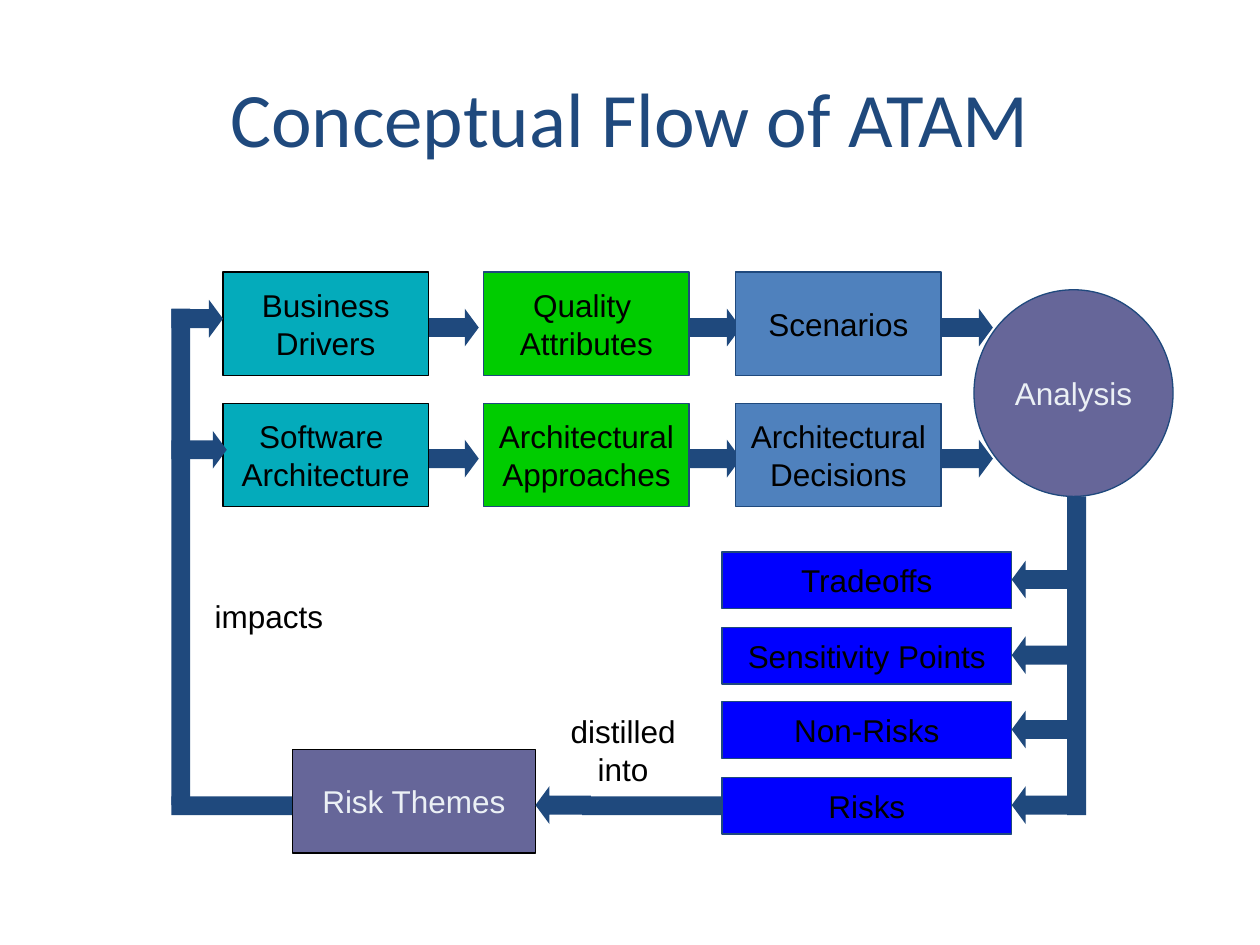
from pptx import Presentation
from pptx.dml.color import RGBColor
from pptx.enum.shapes import MSO_SHAPE as Kind
from pptx.enum.text import MSO_ANCHOR as Anchor, PP_ALIGN as Align
from pptx.util import Emu, Pt

SCALE = 9144  # EMU in one px, 100 px to the inch
NAVY = RGBColor(0x1F, 0x49, 0x7D)
BLUE = RGBColor(0x4F, 0x81, 0xBD)
PURE = RGBColor(0x00, 0x00, 0xFF)
GREEN = RGBColor(0x00, 0xCC, 0x00)
TEAL = RGBColor(0x04, 0xAB, 0xBB)
MAUVE = RGBColor(0x66, 0x66, 0x99)
PALE = RGBColor(0xEB, 0xF0, 0xF5)
BLACK = RGBColor(0x00, 0x00, 0x00)

FRAME = {"margin_left": Emu(9 * SCALE), "margin_right": Emu(9 * SCALE),
         "margin_top": Emu(4 * SCALE), "margin_bottom": Emu(4 * SCALE),
         "vertical_anchor": Anchor.MIDDLE, "word_wrap": False}
FONT = {"name": "Arial", "size": Pt(18)}
HEAD = {"name": "Calibri", "size": Pt(44)}


def px(*sizes):
    return [Emu(size * SCALE) for size in sizes]


def assign(item, values):
    for name, value in values.items():
        setattr(item, name, value)


class Chart:
    """Draws the flow chart's elements on one slide."""

    def __init__(self, slide):
        self.shapes = slide.shapes

    def fill_text(self, shape, text, color, font=FONT):
        frame = shape.text_frame
        frame.text = text
        assign(frame, FRAME)
        for para in frame.paragraphs:
            para.alignment = Align.CENTER
            assign(para.font, font)
            para.font.color.rgb = color

    def shape(self, kind, area, fill):
        shape = self.shapes.add_shape(kind, *px(*area))
        shape.shadow.inherit = False
        shape.fill.solid()
        shape.fill.fore_color.rgb = fill
        shape.line.fill.background()
        return shape

    def node(self, area, text, fill, line=NAVY, color=BLACK, kind=Kind.RECTANGLE):
        shape = self.shape(kind, area, fill)
        shape.line.color.rgb = line
        shape.line.width = Pt(0.75)
        self.fill_text(shape, text, color)

    def bar(self, *area):
        self.shape(Kind.RECTANGLE, area, NAVY)

    def arrow(self, left, top, kind=Kind.RIGHT_ARROW, width=44):
        shape = self.shape(kind, (left, top, width, 30), NAVY)
        shape.adjustments[0] = 0.5
        shape.adjustments[1] = 0.37

    def label(self, area, text, color=BLACK, font=FONT):
        self.fill_text(self.shapes.add_textbox(*px(*area)), text, color, font)


def main():
    deck = Presentation()
    deck.slide_width, deck.slide_height = px(1000, 750)
    chart = Chart(deck.slides.add_slide(deck.slide_layouts[6]))
    chart.label((50, 30, 900, 125), "Conceptual Flow of ATAM", NAVY, HEAD)

    rows = (216, 320)
    for left in (744, 544, 336):
        for top in rows:
            chart.arrow(left, top + 29)
    chart.node((773, 230, 158, 164), "Analysis", MAUVE, color=PALE, kind=Kind.OVAL)

    columns = (
        (177, TEAL, BLACK, ("Business\nDrivers", "Software \nArchitecture")),
        (384, GREEN, NAVY, ("Quality \nAttributes", "Architectural\nApproaches")),
        (584, BLUE, NAVY, ("Scenarios", "Architectural\nDecisions")),
    )
    for left, fill, line, texts in columns:
        for top, text in zip(rows, texts):
            chart.node((left, top, 163, 82), text, fill, line)

    results = ("Tradeoffs", "Sensitivity Points", "Non-Risks", "Risks")
    for step, text in enumerate(results):
        top = 438 + round(step * 59.6)
        chart.node((573, top, 230, 45), text, PURE)
        chart.arrow(803, top + 7, Kind.LEFT_ARROW)
    chart.bar(847, 394, 15, 253)

    for top, width in zip(rows, (41, 44)):
        chart.arrow(136, top + 22, width=width)
    chart.bar(136, 245, 15, 394)
    chart.label((157, 468, 113, 42), "impacts")

    chart.node((232, 595, 193, 82), "Risk Themes", MAUVE, BLACK, PALE)
    chart.label((439, 557, 111, 76), "distilled\ninto")
    chart.arrow(425, 624, Kind.LEFT_ARROW)
    chart.bar(462, 632, 111, 15)
    chart.bar(136, 632, 96, 15)
    deck.save("out.pptx")


if __name__ == "__main__":
    main()
